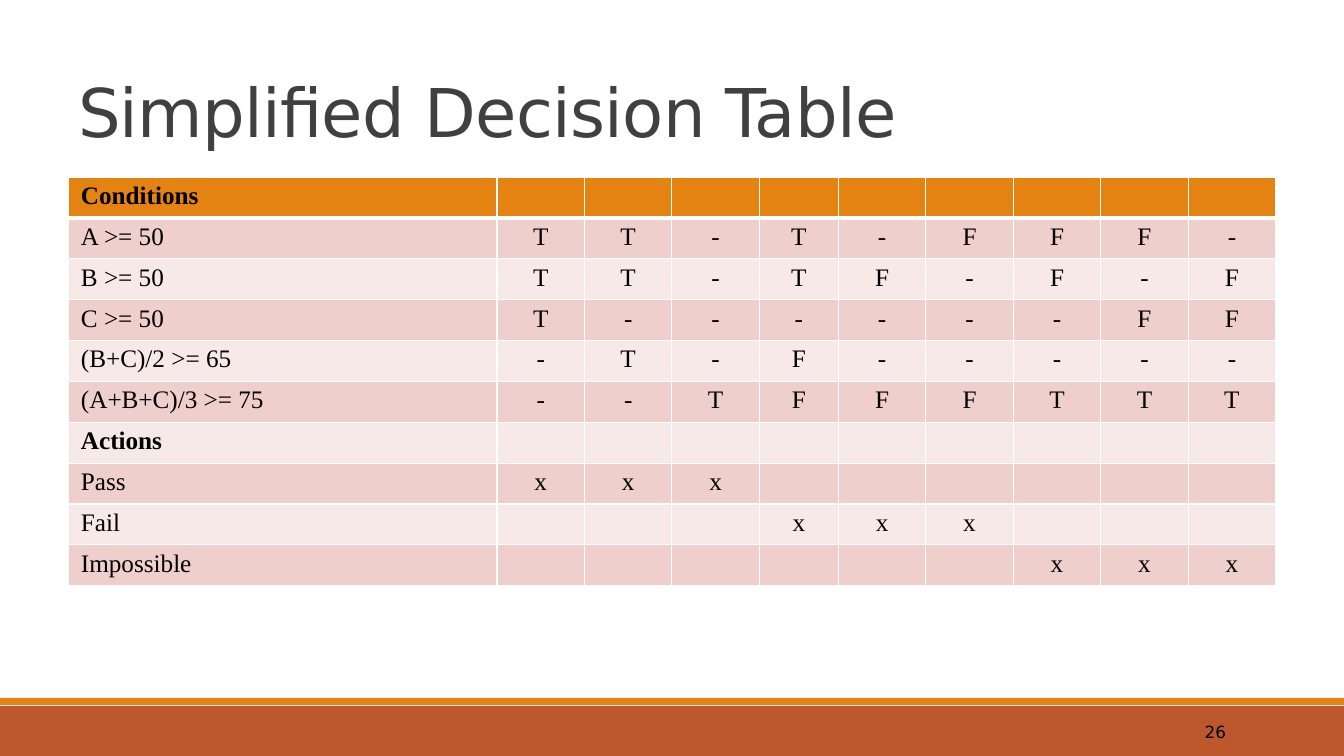
"""Build the slide with the simplified decision table."""
from lxml.etree import SubElement
from pptx import Presentation
from pptx.dml.color import RGBColor
from pptx.enum.shapes import MSO_SHAPE as Shape
from pptx.enum.text import MSO_ANCHOR as Anchor, MSO_AUTO_SIZE as AutoSize, PP_ALIGN as Align
from pptx.oxml.ns import qn
from pptx.util import Emu, Pt

RUST = RGBColor(0xBD, 0x58, 0x2C)
ORANGE = RGBColor(0xE4, 0x83, 0x12)
PINK = RGBColor(0xEF, 0xCF, 0xCC)
PALE_PINK = RGBColor(0xF7, 0xE9, 0xE7)
GREY = RGBColor(0x40, 0x40, 0x40)
BLACK = RGBColor(0, 0, 0)
WHITE = RGBColor(0xFF, 0xFF, 0xFF)

SANS = "DejaVu Sans"
SERIF = "Times New Roman"

RULES = 9
NARROW_RULE = 4
LABEL_WIDTH, NARROW_WIDTH = 429, 79
HEADINGS = ("Conditions", "Actions")
ROWS = [
    ("Conditions", ""),
    ("A >= 50", "TT-T-FFF-"),
    ("B >= 50", "TT-TF-F-F"),
    ("C >= 50", "T------FF"),
    ("(B+C)/2 >= 65", "-T-F-----"),
    ("(A+B+C)/3 >= 75", "--TFFFTTT"),
    ("Actions", ""),
    ("Pass", "xxx      "),
    ("Fail", "   xxx   "),
    ("Impossible", "      xxx"),
]


def px(length):
    return Emu(round(length * 914400 / 100.8))


def format_text(para, font, size, color, align=Align.LEFT, bold=False):
    para.alignment = align
    for span in para.runs:
        span.font.name = font
        span.font.size = Pt(size)
        span.font.bold = bold
        span.font.color.rgb = color


def add_title(page, text):
    title = page.shapes.title
    title.left, title.top, title.width, title.height = px(68), px(30), px(1210), px(126)
    frame = title.text_frame
    frame.text = text
    frame.word_wrap = True
    frame.auto_size = AutoSize.NONE
    frame.vertical_anchor = Anchor.BOTTOM
    para = frame.paragraphs[0]
    para.line_spacing = 0.85
    format_text(para, SANS, 48, GREY)
    para.runs[0].font._element.set("spc", "-50")


def add_band(page, top, height, color):
    band = page.shapes.add_shape(Shape.RECTANGLE, 0, px(top), px(1344), px(height))
    band.shadow.inherit = False
    band.fill.solid()
    band.fill.fore_color.rgb = color
    band.line.fill.background()


def add_page_number(page, number):
    box = page.shapes.add_textbox(px(1092), px(712), px(144), px(40))
    frame = box.text_frame
    frame.text = number
    frame.word_wrap = True
    frame.vertical_anchor = Anchor.MIDDLE
    format_text(frame.paragraphs[0], SANS, 12, BLACK, Align.RIGHT)


def add_border(cell, side, points):
    line = SubElement(cell._tc.get_or_add_tcPr(), qn(f"a:ln{side}"), w=str(Pt(points)))
    fill = SubElement(line, qn("a:solidFill"))
    SubElement(fill, qn("a:srgbClr"), val=str(WHITE))


def format_cell(cell, text, row, column):
    cell.margin_left = cell.margin_right = px(13)
    cell.margin_top = cell.margin_bottom = px(5)
    thick_side = {0: "B", 1: "T"}.get(row)
    for side in "LRTB":
        add_border(cell, side, 3 if side == thick_side else 1)
    cell.fill.solid()
    cell.fill.fore_color.rgb = ORANGE if row == 0 else PINK if row % 2 else PALE_PINK
    cell.text = text
    align = Align.CENTER if column else Align.LEFT
    format_text(cell.text_frame.paragraphs[0], SERIF, 18, BLACK, align, text in HEADINGS)


def add_decision_table(page):
    width, height = 1208, 409
    frame = page.shapes.add_table(len(ROWS), RULES + 1, px(68), px(177), px(width), px(height))
    table = frame.table
    rule_width = (width - LABEL_WIDTH - NARROW_WIDTH) / (RULES - 1)
    widths = [LABEL_WIDTH] + [rule_width] * RULES
    widths[NARROW_RULE] = NARROW_WIDTH
    for column, column_width in zip(table.columns, widths):
        column.width = px(column_width)
    for row, (label, marks) in enumerate(ROWS):
        table.rows[row].height = px(height / len(ROWS))
        texts = [label] + [mark.strip() for mark in marks.ljust(RULES)]
        for column, text in enumerate(texts):
            format_cell(table.cell(row, column), text, row, column)


def main():
    deck = Presentation()
    deck.slide_width, deck.slide_height = px(1344), px(756)
    page = deck.slides.add_slide(deck.slide_layouts[5])
    add_band(page, 706, 50, RUST)
    add_band(page, 698, 7, ORANGE)
    add_title(page, "Simplified Decision Table")
    add_decision_table(page)
    add_page_number(page, "26")
    deck.save("out.pptx")


if __name__ == "__main__":
    main()
